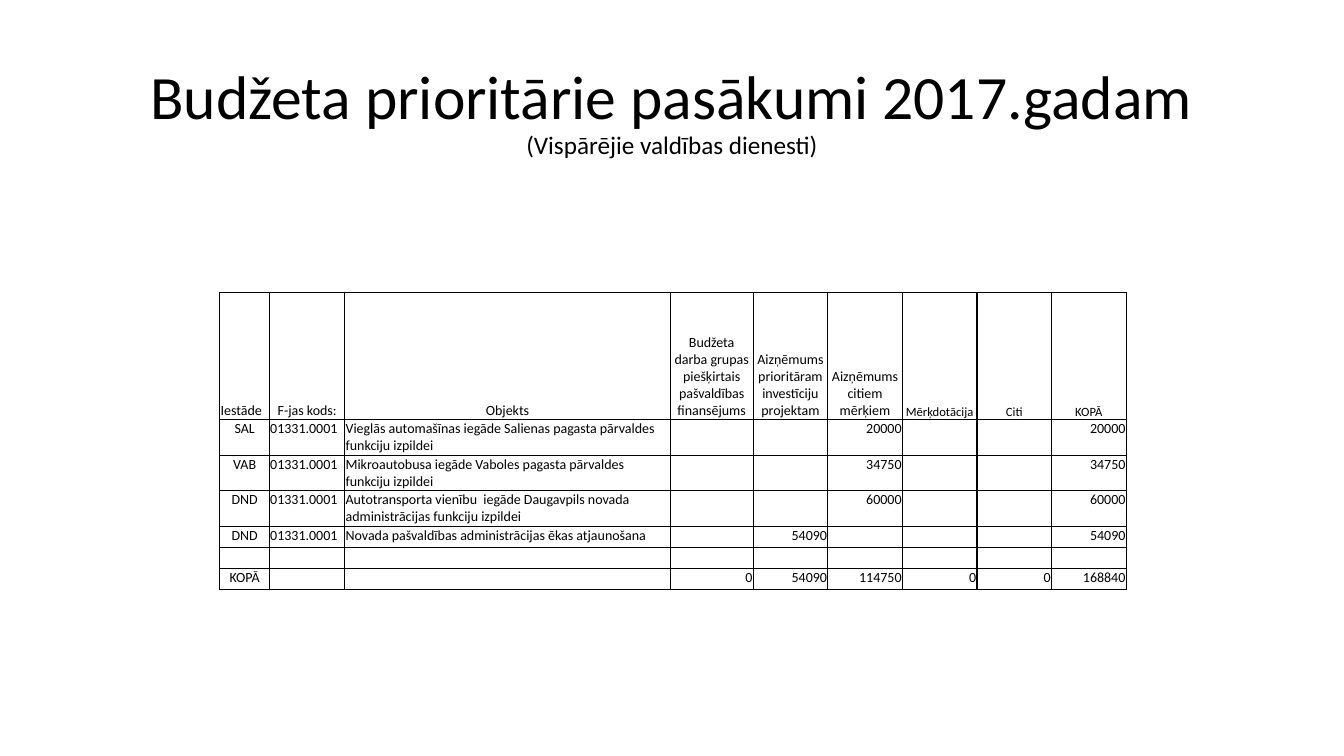
"""Build a slide with the table of budget priorities for 2017."""
from dataclasses import dataclass

from lxml.etree import SubElement as Sub
from pptx import Presentation
from pptx.dml.color import RGBColor
from pptx.enum.text import MSO_ANCHOR as Anchor, PP_ALIGN as Align
from pptx.oxml.ns import qn
from pptx.util import Cm, Pt

FONT = "Calibri"
INK = "000000"


@dataclass
class Col:
    width: float
    head: str
    align: Align = Align.RIGHT
    size: int = 10


@dataclass
class Row:
    height: float
    cells: tuple


COLS = [
    Col(1.25, "Iestāde", Align.CENTER),
    Col(1.9, "F-jas kods:", Align.LEFT),
    Col(8.2, "Objekts", Align.LEFT),
    Col(2.09, "Budžeta darba grupas\npiešķirtais pašvaldības finansējums"),
    Col(1.88, "Aizņēmums prioritāram investīciju projektam"),
    Col(1.88, "Aizņēmums citiem mērķiem"),
    Col(1.88, "Mērķdotācija", size=9),
    Col(1.88, "Citi", size=9),
    Col(1.88, "KOPĀ", size=9),
]
CODE = "01331.0001"
TALL, LOW = 0.9, 0.53
ROWS = [
    Row(TALL, ("SAL", CODE, "Vieglās automašīnas iegāde Salienas pagasta pārvaldes funkciju izpildei",
               "", "", "20000", "", "", "20000")),
    Row(TALL, ("VAB", CODE, "Mikroautobusa iegāde Vaboles pagasta pārvaldes funkciju izpildei",
               "", "", "34750", "", "", "34750")),
    Row(TALL, ("DND", CODE, "Autotransporta vienību  iegāde Daugavpils novada administrācijas funkciju izpildei",
               "", "", "60000", "", "", "60000")),
    Row(LOW, ("DND", CODE, "Novada pašvaldības administrācijas ēkas atjaunošana",
              "", "54090", "", "", "", "54090")),
    Row(LOW, ("",) * len(COLS)),
    Row(LOW, ("KOPĀ", "", "", "0", "54090", "114750", "0", "0", "168840")),
]


def style(run, size: int, ink: str = INK) -> None:
    run.font.name = FONT
    run.font.size = Pt(size)
    run.font.color.rgb = RGBColor.from_string(ink)


def edge(cell, ink: str = INK, width: float = 1) -> None:
    props = cell._tc.get_or_add_tcPr()
    for side in "LRTB":
        line = Sub(props, qn(f"a:ln{side}"), w=str(Pt(width)))
        Sub(Sub(line, qn("a:solidFill")), qn("a:srgbClr"), val=ink)


def write(cell, text: str, size: int, align: Align, anchor: Anchor) -> None:
    edge(cell)
    cell.fill.background()
    cell.margin_left = cell.margin_right = cell.margin_top = Cm(0.02)
    cell.margin_bottom = 0
    cell.vertical_anchor = anchor
    para = cell.text_frame.paragraphs[0]
    para.text = text
    para.alignment = align
    for run in para.runs:
        style(run, size)
    for gap in para._p.findall(qn("a:br")):
        Sub(gap, qn("a:rPr"), sz=str(size * 100))
    if not text:
        Sub(para._p, qn("a:endParaRPr"), sz=str(size * 100))


def add_title(slide) -> None:
    title = slide.shapes.title
    title.left, title.top = Cm(2.33), Cm(1.01)
    title.width, title.height = Cm(29.21), Cm(3.68)
    frame = title.text_frame
    frame.vertical_anchor = Anchor.MIDDLE
    para = frame.paragraphs[0]
    para.text = "Budžeta prioritārie pasākumi 2017.gadam\n(Vispārējie valdības dienesti)"
    para.alignment = Align.CENTER
    para.line_spacing = 0.9
    for run, size in zip(para.runs, (44, 18)):
        style(run, size)


def add_grid(slide) -> None:
    head = Row(3.2, tuple(col.head for col in COLS))
    rows = [head, *ROWS]
    wide = sum(col.width for col in COLS)
    high = sum(row.height for row in rows)
    grid = slide.shapes.add_table(len(rows), len(COLS), Cm(5.54), Cm(7.37), Cm(wide), Cm(high)).table
    grid.first_row = grid.horz_banding = False
    for x, col in enumerate(COLS):
        grid.columns[x].width = Cm(col.width)
    for y, row in enumerate(rows):
        grid.rows[y].height = Cm(row.height)
        for x, (col, text) in enumerate(zip(COLS, row.cells)):
            if row is head:
                align = Align.CENTER if x else Align.LEFT
                write(grid.cell(y, x), text, col.size, align, Anchor.BOTTOM)
            else:
                write(grid.cell(y, x), text, 10, col.align, Anchor.TOP)


def main() -> None:
    deck = Presentation()
    deck.slide_width, deck.slide_height = Cm(33.87), Cm(19.05)
    slide = deck.slides.add_slide(deck.slide_layouts[5])
    add_title(slide)
    add_grid(slide)
    deck.save("out.pptx")


if __name__ == "__main__":
    main()
